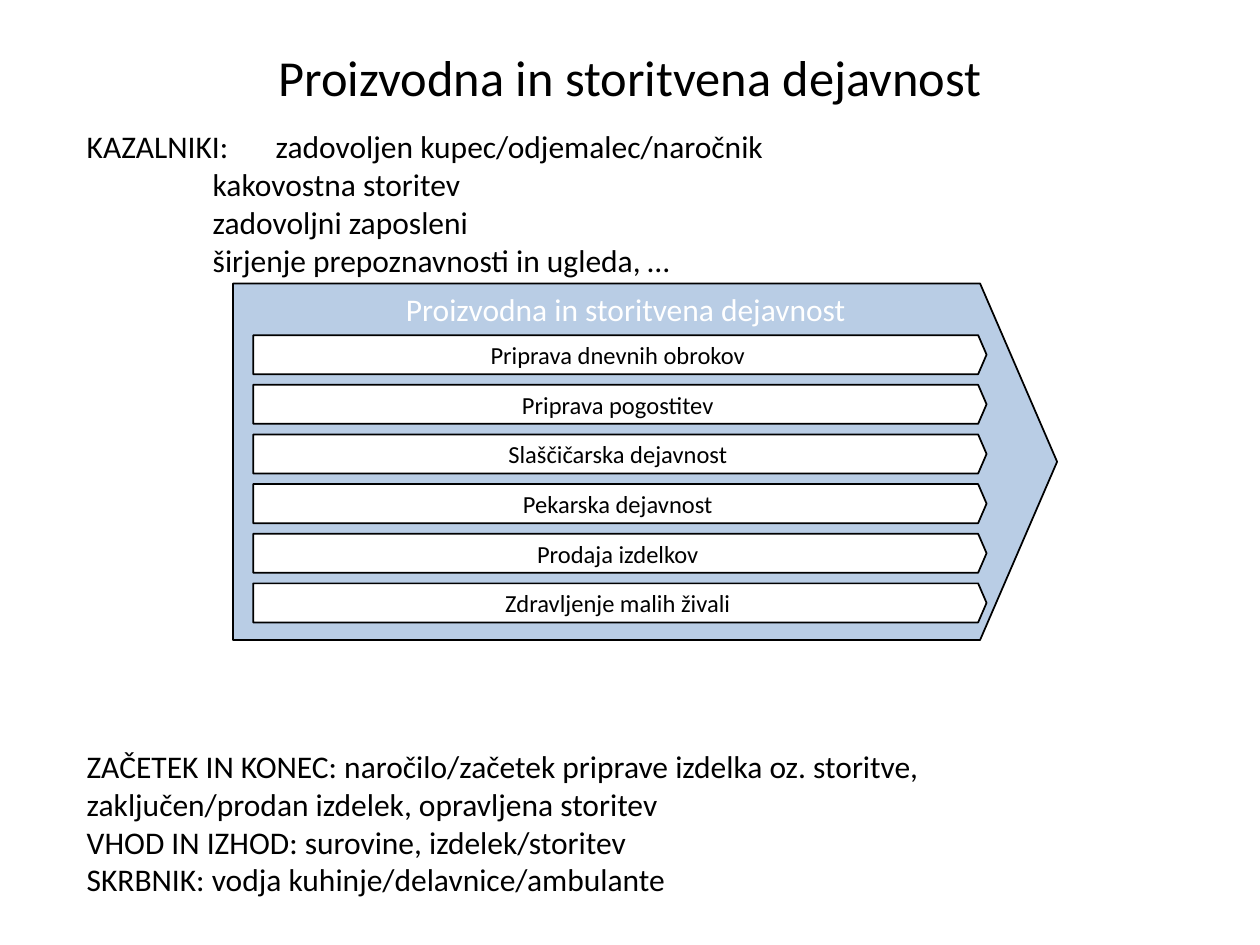
"""Build the slide on production and service activity with its six processes."""
from pptx import Presentation
from pptx.dml.color import RGBColor
from pptx.enum.shapes import MSO_SHAPE as Shape
from pptx.enum.text import MSO_ANCHOR as Anchor, PP_ALIGN as Align
from pptx.util import Inches, Pt


def color(value):
    return RGBColor.from_string(value)


def write(box, lines, size, ink="000000", align=Align.LEFT, anchor=Anchor.TOP):
    frame = box.text_frame
    for name, value in {"word_wrap": True, "vertical_anchor": anchor,
                        "margin_left": Inches(0.1), "margin_right": Inches(0.1),
                        "margin_top": Inches(0.05), "margin_bottom": Inches(0.05)}.items():
        setattr(frame, name, value)
    for index, line in enumerate(lines):
        para = frame.paragraphs[0] if index == 0 else frame.add_paragraph()
        para.alignment = align
        span = para.add_run()
        span.text = line
        for name, value in {"name": "Calibri", "size": Pt(size)}.items():
            setattr(span.font, name, value)
        span.font.color.rgb = color(ink)


deck = Presentation()
deck.slide_width, deck.slide_height = Inches(10), Inches(7.5)
page = deck.slides.add_slide(deck.slide_layouts[6])

heading = "Proizvodna in storitvena dejavnost"
processes = ["Priprava dnevnih obrokov", "Priprava pogostitev", "Slaščičarska dejavnost",
             "Pekarska dejavnost", "Prodaja izdelkov", "Zdravljenje malih živali"]
first_top, pitch = 2.66, 0.394

arrows = [(heading, (1.85, 2.25, 6.54, 2.83), "B9CDE5", 18, "FFFFFF", Anchor.TOP)]
for row, process in enumerate(processes):
    place = (2.01, first_top + row * pitch, 5.82, 0.31)
    arrows.append((process, place, "FFFFFF", 14, "000000", Anchor.MIDDLE))

for label, place, fill, size, ink, anchor in arrows:
    arrow = page.shapes.add_shape(Shape.PENTAGON, *map(Inches, place))
    arrow.adjustments[0] = 0.216
    arrow.shadow.inherit = False
    arrow.fill.solid()
    arrow.fill.fore_color.rgb = color(fill)
    arrow.line.color.rgb = color("000000")
    arrow.line.width = Pt(1)
    write(arrow, [label], size, ink, Align.CENTER, anchor)

title = page.shapes.add_textbox(*map(Inches, (0.5, 0.3, 9, 0.61)))
write(title, [heading], 28.8, align=Align.CENTER, anchor=Anchor.MIDDLE)

indicators = page.shapes.add_textbox(*map(Inches, (0.59, 0.96, 8.26, 1.62)))
write(indicators, ["KAZALNIKI: \tzadovoljen kupec/odjemalec/naročnik",
                   "\t\tkakovostna storitev",
                   "\t\tzadovoljni zaposleni",
                   "\t\tširjenje prepoznavnosti in ugleda, …"], 18)

summary = page.shapes.add_textbox(*map(Inches, (0.59, 5.88, 8.43, 1.31)))
write(summary, ["ZAČETEK IN KONEC: naročilo/začetek priprave izdelka oz. storitve, "
                "zaključen/prodan izdelek, opravljena storitev",
                "VHOD IN IZHOD: surovine, izdelek/storitev",
                "SKRBNIK: vodja kuhinje/delavnice/ambulante"], 18)

deck.save("out.pptx")
